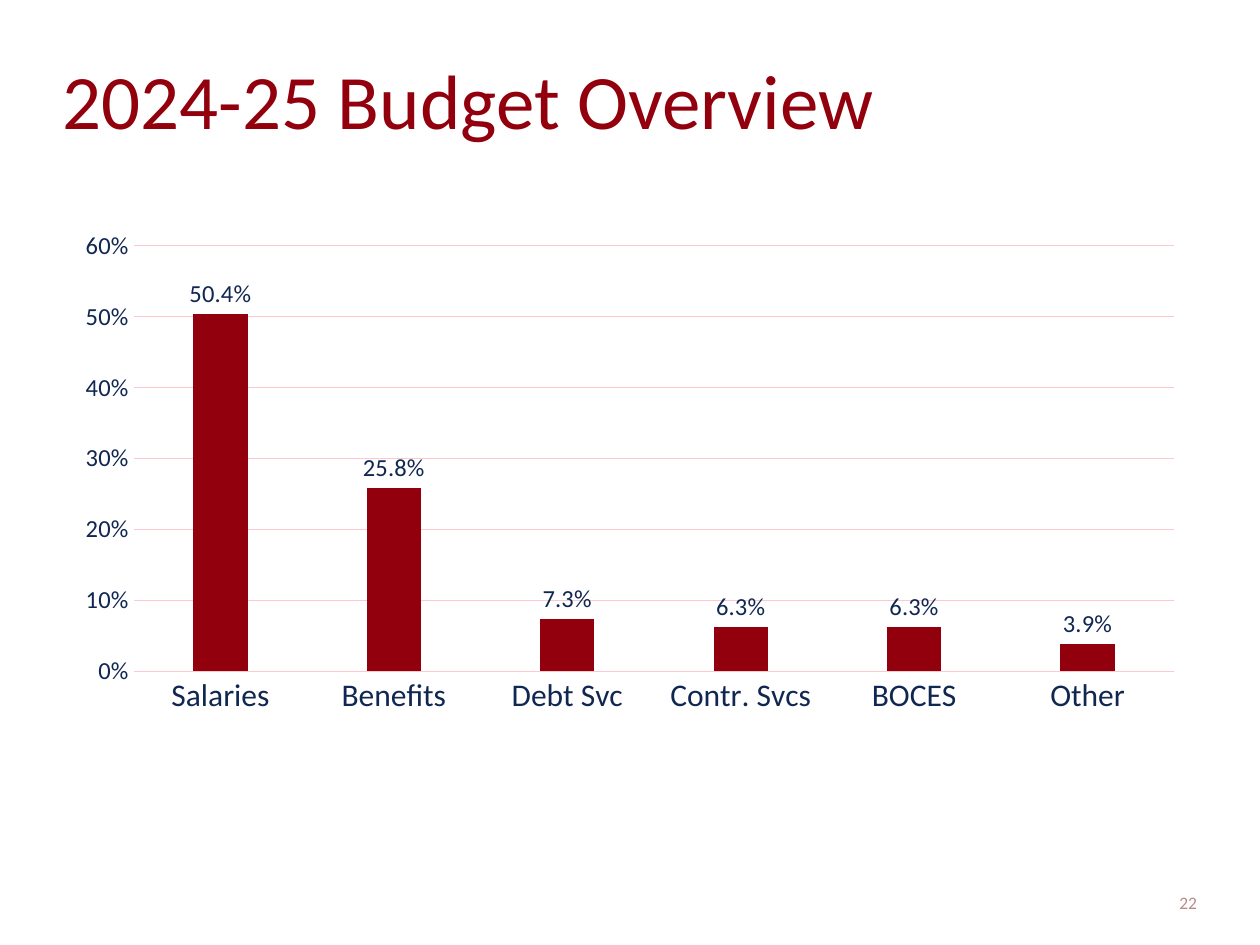
from dataclasses import dataclass

from pptx import Presentation
from pptx.chart.data import CategoryChartData
from pptx.dml.color import RGBColor
from pptx.enum.chart import XL_CHART_TYPE, XL_LABEL_POSITION, XL_TICK_MARK
from pptx.enum.text import MSO_ANCHOR, PP_ALIGN
from pptx.util import Emu, Pt

COLUMNS = XL_CHART_TYPE.COLUMN_CLUSTERED
OUTSIDE_END = XL_LABEL_POSITION.OUTSIDE_END
NO_TICK = XL_TICK_MARK.NONE
TOP, BOTTOM = MSO_ANCHOR.TOP, MSO_ANCHOR.BOTTOM
LEFT, RIGHT = PP_ALIGN.LEFT, PP_ALIGN.RIGHT

EMU_PER_PX = 9144
FONT = "Calibri"
MAROON, NAVY, PINK, MUTED = "92000E", "102752", "FFC8CE", "B68C8C"


@dataclass(frozen=True)
class Box:
    left: int
    top: int
    width: int
    height: int

    def emu(self) -> tuple:
        return px(self.left), px(self.top), px(self.width), px(self.height)


@dataclass(frozen=True)
class Caption:
    text: str
    box: Box
    size: int
    color: str
    align: PP_ALIGN = LEFT
    anchor: MSO_ANCHOR = TOP
    line_spacing: float = 1.0


@dataclass(frozen=True)
class Expense:
    category: str
    share: float


CAPTIONS = [
    Caption("2024-25 Budget Overview", Box(50, 50, 900, 125), 44, MAROON, line_spacing=0.9),
    Caption("22", Box(900, 685, 50, 40), 10, MUTED, RIGHT, BOTTOM),
]
EXPENSES = [
    Expense("Salaries", 0.504),
    Expense("Benefits", 0.258),
    Expense("Debt Svc", 0.073),
    Expense("Contr. Svcs", 0.063),
    Expense("BOCES", 0.063),
    Expense("Other", 0.039),
]


def px(length: int) -> Emu:
    return Emu(length * EMU_PER_PX)


def rgb(color: str) -> RGBColor:
    return RGBColor.from_string(color)


def set_font(font, size: int, color: str) -> None:
    font.name = FONT
    font.size = Pt(size)
    font.color.rgb = rgb(color)


def set_line(line, color: str) -> None:
    line.color.rgb = rgb(color)
    line.width = Pt(0.75)


def draw_caption(slide, caption: Caption) -> None:
    frame = slide.shapes.add_textbox(*caption.box.emu()).text_frame
    frame.word_wrap = True
    frame.vertical_anchor = caption.anchor
    frame.margin_left = frame.margin_right = 0
    frame.margin_top = frame.margin_bottom = 0
    paragraph = frame.paragraphs[0]
    paragraph.alignment = caption.align
    paragraph.line_spacing = caption.line_spacing
    run = paragraph.add_run()
    run.text = caption.text
    set_font(run.font, caption.size, caption.color)


def style_axis(axis, size: int) -> None:
    axis.major_tick_mark = axis.minor_tick_mark = NO_TICK
    set_font(axis.tick_labels.font, size, NAVY)


def draw_budget_chart(slide, box: Box, expenses: list[Expense]) -> None:
    budget = CategoryChartData(number_format="0.0%")
    budget.categories = [expense.category for expense in expenses]
    budget.add_series("Series 1", [expense.share for expense in expenses])
    chart = slide.shapes.add_chart(COLUMNS, *box.emu(), budget).chart
    chart.has_legend = chart.has_title = False
    set_font(chart.font, 10, MAROON)

    categories, shares = chart.category_axis, chart.value_axis
    style_axis(categories, 18)
    set_line(categories.format.line, PINK)
    style_axis(shares, 14)
    shares.format.line.fill.background()
    shares.minimum_scale, shares.maximum_scale, shares.major_unit = 0, 0.6, 0.1
    shares.tick_labels.number_format = "0%"
    shares.tick_labels.number_format_is_linked = False
    set_line(shares.major_gridlines.format.line, PINK)

    plot = chart.plots[0]
    plot.vary_by_categories = False
    plot.gap_width, plot.overlap = 219, -27
    columns = plot.series[0]
    columns.format.fill.solid()
    columns.format.fill.fore_color.rgb = rgb(MAROON)
    labels = columns.data_labels
    labels.show_value = True
    labels.position = OUTSIDE_END
    labels.number_format = "0.0%"
    labels.number_format_is_linked = False
    set_font(labels.font, 14, NAVY)


def main() -> None:
    deck = Presentation()
    deck.slide_width, deck.slide_height = px(1000), px(750)
    slide = deck.slides.add_slide(deck.slide_layouts[6])
    for caption in CAPTIONS:
        draw_caption(slide, caption)
    draw_budget_chart(slide, Box(50, 175, 900, 400), EXPENSES)
    deck.save("out.pptx")


if __name__ == "__main__":
    main()
